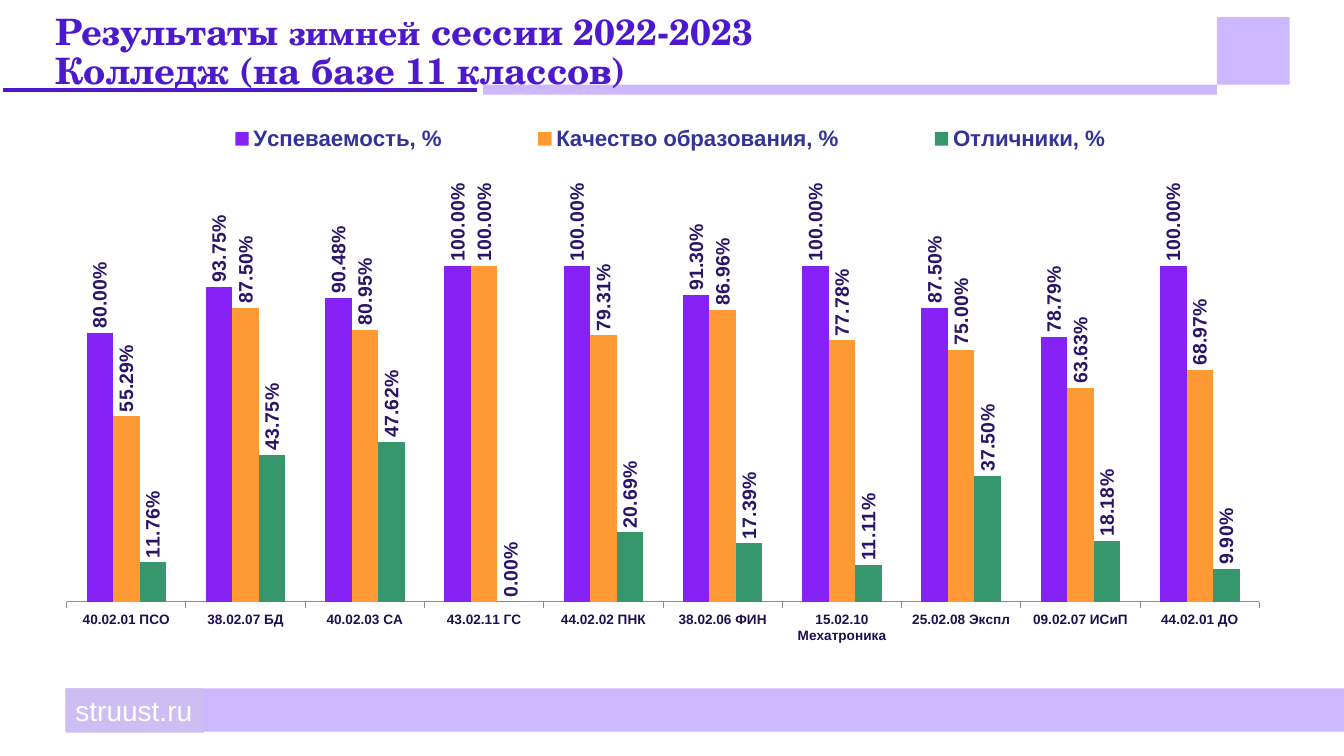
import pptx
import pptx.chart.data
import pptx.dml.color
import pptx.enum.chart
import pptx.enum.shapes
import pptx.enum.text
import pptx.oxml
import pptx.oxml.ns
import pptx.util

Inches = pptx.util.Inches
LILAC, INDIGO, WHITE = "CBB8FF", "4D19CC", "FFFFFF"
GROUPS = ["40.02.01 ПСО", "38.02.07 БД", "40.02.03 СА", "43.02.11 ГС", "44.02.02 ПНК",
          "38.02.06 ФИН", "15.02.10 Мехатроника", "25.02.08 Экспл", "09.02.07 ИСиП",
          "44.02.01 ДО"]
RESULTS = [
    ("Успеваемость, %", "8722F6",
     [0.8, 0.9375, 0.9048, 1, 1, 0.913, 1, 0.875, 0.7879, 1]),
    ("Качество образования, %", "FF9933",
     [0.5529, 0.875, 0.8095, 1, 0.7931, 0.8696, 0.7778, 0.75, 0.6363, 0.6897]),
    ("Отличники, %", "35976B",
     [0.1176, 0.4375, 0.4762, 0, 0.2069, 0.1739, 0.1111, 0.375, 0.1818, 0.099]),
]


def color(value):
    """Turn a hex string into a colour."""
    return pptx.dml.color.RGBColor.from_string(value)


def style_font(font, size, value, bold=False, name="Arial"):
    """Set the face, size, colour and weight of a font."""
    font.name, font.size, font.bold = name, pptx.util.Pt(size), bold
    font.color.rgb = color(value)


def add_block(slide, left, top, width, height, fill):
    """Add a flat rectangle."""
    shape = slide.shapes.add_shape(pptx.enum.shapes.MSO_SHAPE.RECTANGLE, Inches(left),
                                   Inches(top), Inches(width), Inches(height))
    shape.shadow.inherit = False
    shape.fill.solid()
    shape.fill.fore_color.rgb = color(fill)
    shape.line.fill.background()
    return shape


def add_header(slide, left, top, width, height):
    """Draw the header rule, its accent and the corner square."""
    square, rule, accent = 0.72, 0.1, 4.76
    rule_top = top + height
    add_block(slide, left, rule_top, width - square, rule, LILAC)
    dark_rule = add_block(slide, left, rule_top, accent, rule, INDIGO)
    dark_rule.line.color.rgb = color(WHITE)
    dark_rule.line.width = pptx.util.Pt(4.5)
    add_block(slide, left + width - square, top, square, height, LILAC)


def add_title(slide, left, top, width, height):
    """Write the two-line title."""
    box = slide.shapes.add_textbox(Inches(left), Inches(top), Inches(width), Inches(height))
    box.text_frame.word_wrap = True
    paragraph = box.text_frame.paragraphs[0]
    paragraph.line_spacing = 0.9
    for text, size in [("Результаты ", 26), ("зимней", 24), (" сессии 2022-2023", 26),
                       ("\v", 26), ("Колледж (на базе 11 классов)", 26)]:
        if text == "\v":
            paragraph.add_line_break()
            continue
        run = paragraph.add_run()
        run.text = text
        style_font(run.font, size, INDIGO, True, "TeX Gyre Schola")


def set_layout(element, index, x, y, width, height, inner=False):
    """Place a chart part by fractions of the chart's size."""
    for previous in element.xpath("c:layout"):
        element.remove(previous)
    target = '<c:layoutTarget val="inner"/>' if inner else ""
    element.insert(index, pptx.oxml.parse_xml(
        f'<c:layout {pptx.oxml.ns.nsdecls("c")}><c:manualLayout>{target}'
        '<c:xMode val="edge"/><c:yMode val="edge"/>'
        f'<c:x val="{x}"/><c:y val="{y}"/><c:w val="{width}"/><c:h val="{height}"/>'
        '</c:manualLayout></c:layout>'))


def style_series(series, fill):
    """Colour a series and give it upright percentage labels."""
    series.format.fill.solid()
    series.format.fill.fore_color.rgb = color(fill)
    series.invert_if_negative = False
    labels = series.data_labels
    style_font(labels.font, 13.9, "2A1468", True)
    labels.number_format, labels.number_format_is_linked = "0.00%", False
    labels.position = pptx.enum.chart.XL_LABEL_POSITION.OUTSIDE_END
    labels.show_value = True
    for body in series._element.xpath("c:dLbls/c:txPr/a:bodyPr"):
        body.set("rot", "-5400000")
        body.set("vert", "horz")


def add_results_chart(slide, left, top, width, height):
    """Chart the session results of every group."""
    data = pptx.chart.data.CategoryChartData(number_format="0.00%")
    data.categories = GROUPS
    for name, _, values in RESULTS:
        data.add_series(name, values)
    chart = slide.shapes.add_chart(
        pptx.enum.chart.XL_CHART_TYPE.COLUMN_CLUSTERED, Inches(left), Inches(top),
        Inches(width), Inches(height), data).chart
    style_font(chart.font, 17.9, "2A1468")
    chart.has_title = False
    plot = chart.plots[0]
    plot.gap_width, plot.overlap, plot.vary_by_categories = 150, 0, False
    for series, (_, fill, _) in zip(plot.series, RESULTS):
        style_series(series, fill)

    value_axis, category_axis = chart.value_axis, chart.category_axis
    value_axis.minimum_scale, value_axis.maximum_scale = 0, 1.2
    value_axis.has_major_gridlines = False
    value_axis.visible = False
    category_axis.major_tick_mark = pptx.enum.chart.XL_TICK_MARK.OUTSIDE
    category_axis.format.line.color.rgb = color("8B8B8B")
    style_font(category_axis.tick_labels.font, 9.7, "1F0F4E", True)

    chart.has_legend = True
    legend = chart.legend
    legend.position = pptx.enum.chart.XL_LEGEND_POSITION.RIGHT
    legend.include_in_layout = False
    style_font(legend.font, 15.9, "333399", True)
    set_layout(legend._element, 1, 0.1, 0.04, 0.82, 0.07)
    set_layout(chart._chartSpace.chart.plotArea, 0, 0.038, 0.164, 0.933, 0.603, True)


def add_footer(slide, left, top, width, height):
    """Draw the footer band with the site address at its left end."""
    add_block(slide, left, top, width, height, LILAC)
    label = add_block(slide, left, top, 1.37, 0.44, "CCBEF3")
    frame = label.text_frame
    frame.text = "struust.ru"
    frame.word_wrap = False
    frame.vertical_anchor = pptx.enum.text.MSO_ANCHOR.TOP
    paragraph = frame.paragraphs[0]
    paragraph.alignment = pptx.enum.text.PP_ALIGN.LEFT
    style_font(paragraph.runs[0].font, 20, WHITE)


def main():
    """Build the slide and save it."""
    presentation = pptx.Presentation()
    presentation.slide_width, presentation.slide_height = Inches(13.33), Inches(7.5)
    slide = presentation.slides.add_slide(presentation.slide_layouts[6])
    add_header(slide, 0, 0.17, 12.79, 0.67)
    add_footer(slide, 0.65, 6.83, 12.68, 0.43)
    add_title(slide, 0.45, 0.09, 7.38, 0.46)
    add_results_chart(slide, 0.18, 0.88, 12.68, 6.64)
    presentation.save("out.pptx")


if __name__ == "__main__":
    main()
